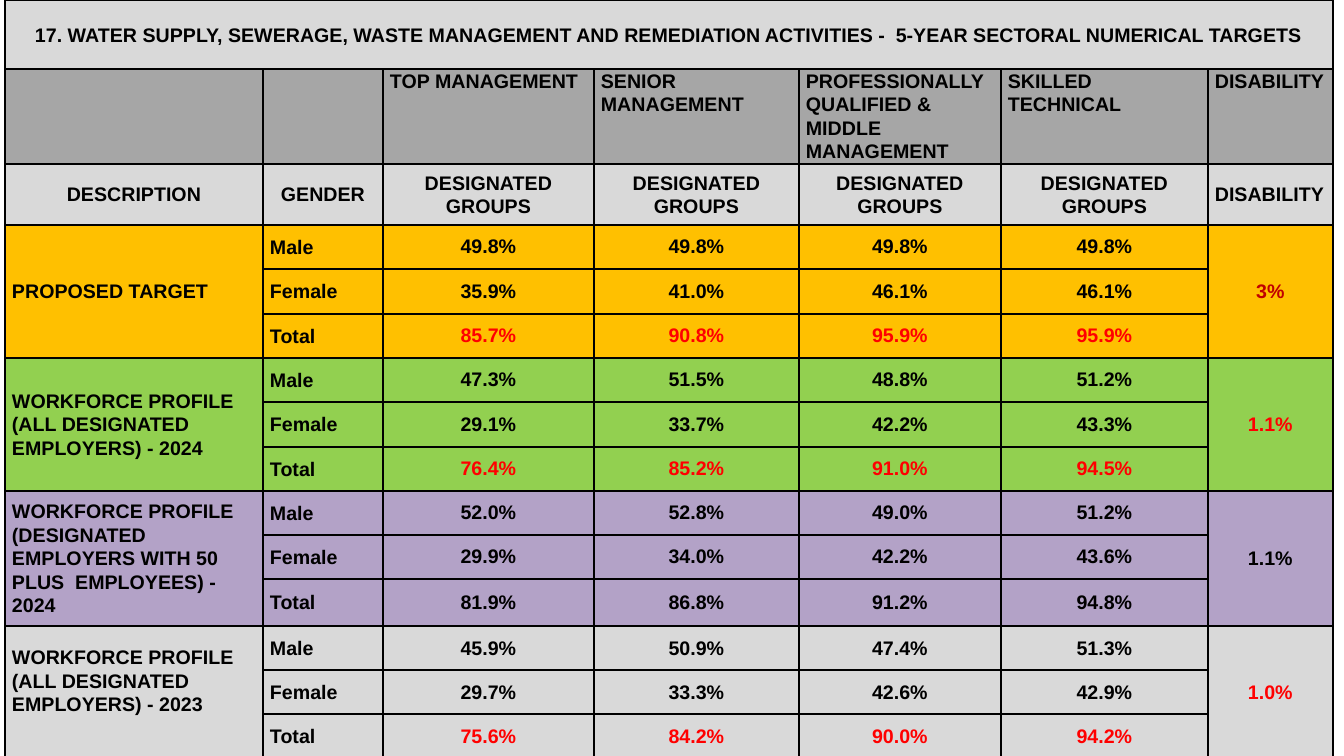
from dataclasses import dataclass
from lxml.etree import SubElement
from pptx import Presentation
from pptx.dml.color import RGBColor as Color
from pptx.enum.text import MSO_ANCHOR as Anchor, PP_ALIGN as Align
from pptx.oxml.ns import qn
from pptx.util import Pt

PX = 914400 / 100.8


@dataclass(frozen=True)
class Theme:
    font: str = "Arial"
    size: int = 14
    border: float = 1.5
    spacing: float = 1.07
    black: str = "000000"
    red: str = "FF0000"
    dark_red: str = "C00000"
    light_grey: str = "D9D9D9"
    grey: str = "A6A6A6"
    amber: str = "FFC000"
    green: str = "92D050"
    purple: str = "B3A2C7"


theme = Theme()


def px(length):
    return round(length * PX)


def write(cell, text, align=Align.CENTER, color=theme.black, anchor=Anchor.MIDDLE, spacing=theme.spacing):
    cell.vertical_anchor = anchor
    cell.margin_left = cell.margin_right = px(7)
    cell.margin_top = cell.margin_bottom = 0
    para = cell.text_frame.paragraphs[0]
    para.text = text
    para.alignment = align
    para.line_spacing = spacing
    para.font.name = theme.font
    para.font.size = Pt(theme.size)
    para.font.bold = True
    para.font.color.rgb = Color.from_string(color)


column_widths = [258, 120, 211, 205, 202, 207, 125]
row_heights = [69, 95, 61] + [44, 45, 44] * 2 + [44, 44, 47] + [44, 44, 45]

title = ("17. WATER SUPPLY, SEWERAGE, WASTE MANAGEMENT AND REMEDIATION ACTIVITIES -  "
         "5-YEAR SECTORAL NUMERICAL TARGETS")
levels = ["", "", "TOP MANAGEMENT", "SENIOR MANAGEMENT",
          "PROFESSIONALLY QUALIFIED & MIDDLE MANAGEMENT", "SKILLED TECHNICAL", "DISABILITY"]
headings = ["DESCRIPTION", "GENDER"] + ["DESIGNATED GROUPS"] * 4 + ["DISABILITY"]
genders = ["Male", "Female", "Total"]

groups = [
    ("PROPOSED TARGET", theme.amber, theme.red, "3%", theme.dark_red, 1.0,
     [["49.8%", "49.8%", "49.8%", "49.8%"],
      ["35.9%", "41.0%", "46.1%", "46.1%"],
      ["85.7%", "90.8%", "95.9%", "95.9%"]]),
    ("WORKFORCE PROFILE (ALL DESIGNATED EMPLOYERS) - 2024",
     theme.green, theme.red, "1.1%", theme.red, 1.0,
     [["47.3%", "51.5%", "48.8%", "51.2%"],
      ["29.1%", "33.7%", "42.2%", "43.3%"],
      ["76.4%", "85.2%", "91.0%", "94.5%"]]),
    ("WORKFORCE PROFILE (DESIGNATED EMPLOYERS WITH 50 PLUS  EMPLOYEES) - 2024",
     theme.purple, theme.black, "1.1%", theme.black, 1.0,
     [["52.0%", "52.8%", "49.0%", "51.2%"],
      ["29.9%", "34.0%", "42.2%", "43.6%"],
      ["81.9%", "86.8%", "91.2%", "94.8%"]]),
    ("WORKFORCE PROFILE (ALL DESIGNATED EMPLOYERS) - 2023",
     theme.light_grey, theme.red, "1.0%", theme.red, theme.spacing,
     [["45.9%", "50.9%", "47.4%", "51.3%"],
      ["29.7%", "33.3%", "42.6%", "42.9%"],
      ["75.6%", "84.2%", "90.0%", "94.2%"]]),
]

deck = Presentation()
deck.slide_width = px(1344)
deck.slide_height = px(756)
page = deck.slides.add_slide(deck.slide_layouts[6])

table = page.shapes.add_table(
    len(row_heights), len(column_widths), px(5), 0, px(sum(column_widths)), px(sum(row_heights))).table
table.first_row = False
table.horz_banding = False
for column, width in zip(table.columns, column_widths):
    column.width = px(width)
for row, height in zip(table.rows, row_heights):
    row.height = px(height)

row_fills = [theme.light_grey, theme.grey, theme.light_grey]
for group in groups:
    row_fills += [group[1]] * len(genders)
for row, fill in zip(table.rows, row_fills):
    for cell in row.cells:
        properties = cell._tc.get_or_add_tcPr()
        for side in ("a:lnL", "a:lnR", "a:lnT", "a:lnB"):
            line = SubElement(properties, qn(side), w=str(Pt(theme.border)))
            SubElement(SubElement(line, qn("a:solidFill")), qn("a:srgbClr"), val=theme.black)
        cell.fill.solid()
        cell.fill.fore_color.rgb = Color.from_string(fill)

table.cell(0, 0).merge(table.cell(0, 6))
write(table.cell(0, 0), title)
for column, (level, heading) in enumerate(zip(levels, headings)):
    if level:
        write(table.cell(1, column), level, Align.LEFT, anchor=Anchor.TOP)
    write(table.cell(2, column), heading, Align.LEFT if column == 6 else Align.CENTER)

for index, (name, fill, total_color, disability, disability_color, spacing, values) in enumerate(groups):
    top = 3 + index * len(genders)
    for column in (0, 6):
        table.cell(top, column).merge(table.cell(top + 2, column))
    write(table.cell(top, 0), name, Align.LEFT)
    write(table.cell(top, 6), disability, color=disability_color)
    for row, (gender, shares) in enumerate(zip(genders, values), top):
        write(table.cell(row, 1), gender, Align.LEFT)
        color = total_color if gender == "Total" else theme.black
        for column, share in enumerate(shares, 2):
            write(table.cell(row, column), share, color=color, spacing=spacing)

table.cell(12, 0).margin_bottom = px(23)

deck.save("out.pptx")
